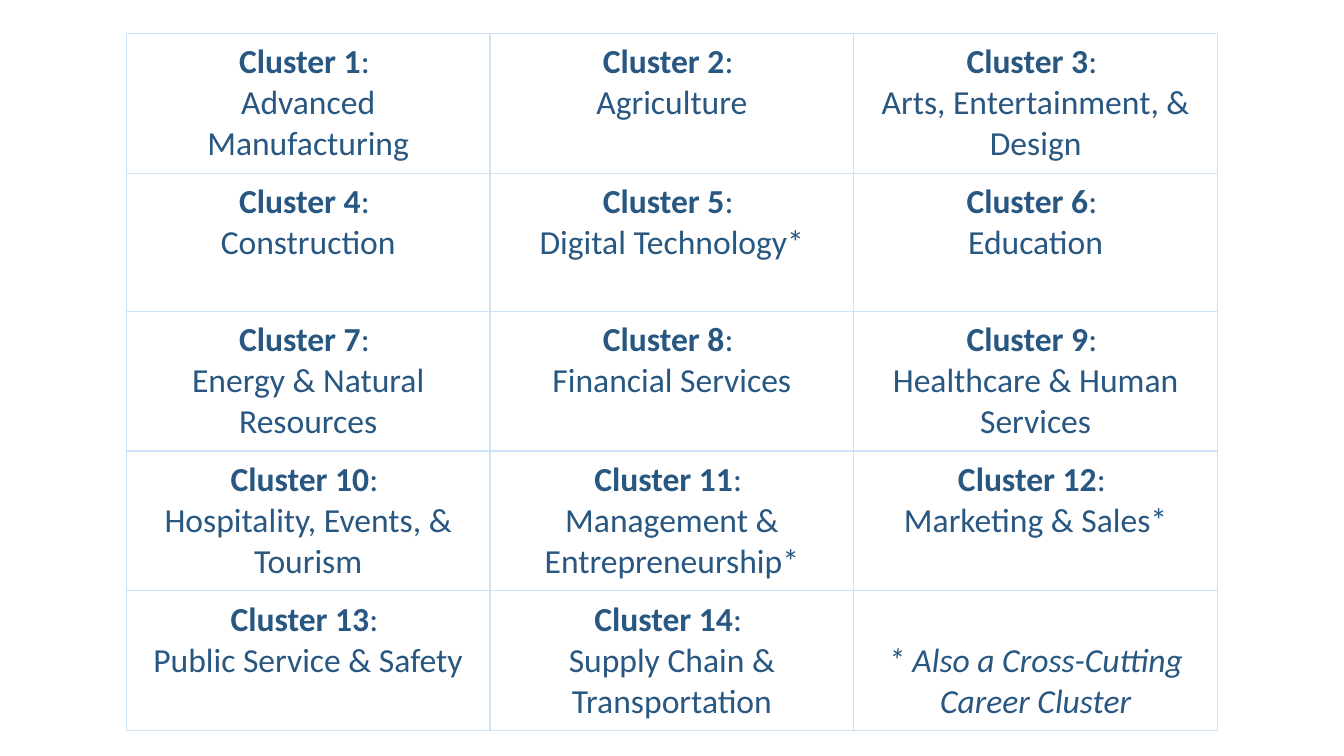
from lxml import etree
from pptx import Presentation
from pptx import util as u
from pptx.dml.color import RGBColor
from pptx.enum import text
from pptx.oxml.ns import qn

CLUSTERS = [
    "Advanced Manufacturing", "Agriculture", "Arts, Entertainment, & Design",
    "Construction", "Digital Technology*", "Education",
    "Energy & Natural Resources", "Financial Services", "Healthcare & Human Services",
    "Hospitality, Events, & Tourism", "Management & Entrepreneurship*", "Marketing & Sales*",
    "Public Service & Safety", "Supply Chain & Transportation",
]
FOOTNOTE = "* Also a Cross-Cutting Career Cluster"

COLUMNS, ROWS = 3, 5
WIDTH = 10
HEIGHT = WIDTH * 9 / 16
TABLE_WIDTH, TABLE_HEIGHT, TABLE_TOP = 8.12, 5.13, 0.25
NAVY = RGBColor(0x28, 0x57, 0x81)
PALE_BLUE = RGBColor(0xCF, 0xE2, 0xF3)


def add_borders(cell, color, points):
    properties = cell._tc.get_or_add_tcPr()
    for index, side in enumerate(("lnL", "lnR", "lnT", "lnB")):
        line = etree.Element(qn(f"a:{side}"), w=str(u.Pt(points)))
        fill = etree.SubElement(line, qn("a:solidFill"))
        etree.SubElement(fill, qn("a:srgbClr"), val=str(color))
        properties.insert(index, line)


def add_span(para, words, bold=False, italic=False):
    span = para.add_run()
    span.text = words
    font = span.font
    font.name, font.size = "Calibri", u.Pt(18)
    font.bold, font.italic = bold, italic
    font.color.rgb = NAVY


def format_cell(cell):
    cell.margin_left = cell.margin_right = u.Inches(0.1)
    cell.margin_top = cell.margin_bottom = u.Pt(4.5)
    cell.fill.background()
    add_borders(cell, PALE_BLUE, 0.75)
    for para in cell.text_frame.paragraphs:
        para.alignment = text.PP_ALIGN.CENTER


def main():
    deck = Presentation()
    deck.slide_width, deck.slide_height = u.Inches(WIDTH), u.Inches(HEIGHT)
    page = deck.slides.add_slide(deck.slide_layouts[6])

    table = page.shapes.add_table(
        ROWS, COLUMNS, u.Inches((WIDTH - TABLE_WIDTH) / 2), u.Inches(TABLE_TOP),
        u.Inches(TABLE_WIDTH), u.Inches(TABLE_HEIGHT)).table
    table.first_row = table.horz_banding = False

    for index, name in enumerate(CLUSTERS):
        cell = table.cell(*divmod(index, COLUMNS))
        heading = cell.text_frame.paragraphs[0]
        add_span(heading, f"Cluster {index + 1}", bold=True)
        add_span(heading, ": ")
        add_span(cell.text_frame.add_paragraph(), name)
        format_cell(cell)

    note = table.cell(ROWS - 1, COLUMNS - 1)
    note.vertical_anchor = text.MSO_ANCHOR.BOTTOM
    add_span(note.text_frame.paragraphs[0], FOOTNOTE, italic=True)
    format_cell(note)

    deck.save("out.pptx")


if __name__ == "__main__":
    main()
